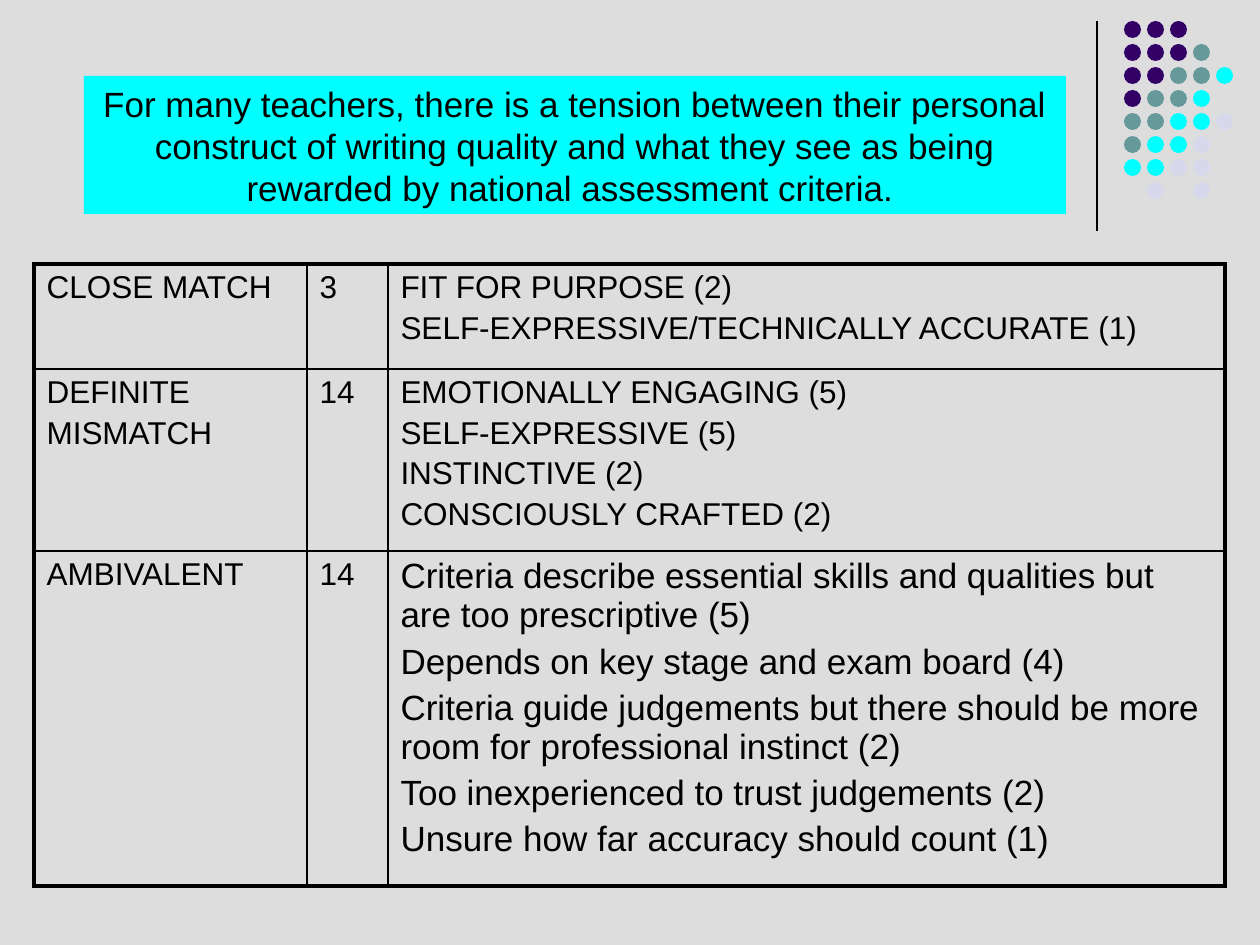
from pptx import Presentation
from pptx.dml.color import RGBColor
from pptx.enum.shapes import MSO_CONNECTOR as Link, MSO_SHAPE as Kind
from pptx.enum.text import MSO_ANCHOR as Anchor, PP_ALIGN as Align
from pptx.oxml.ns import qn
from pptx.util import Pt
from lxml.etree import SubElement as sub

SCALE = 914400 // 126
INK = "000000"
TONES = {"p": "330066", "t": "669999", "c": "00FFFF", "l": "D8D8EC"}
DOTS = ["ppp", "pppt", "ppttc", "pttc", "ttccl", "tccl", "ccll", " l l"]
CLAIM = (
    "For many teachers, there is a tension between their personal construct of "
    "writing quality and what they see as being rewarded by national assessment criteria. "
)
COLS = [273, 81, 837]
ROWS = [
    (105, 18, ["CLOSE MATCH"], ["3"],
     ["FIT FOR PURPOSE (2)", "SELF-EXPRESSIVE/TECHNICALLY ACCURATE (1)"]),
    (182, 18, ["DEFINITE", "MISMATCH"], ["14"],
     ["EMOTIONALLY ENGAGING (5)", "SELF-EXPRESSIVE (5)",
      "INSTINCTIVE (2)", "CONSCIOUSLY CRAFTED (2)"]),
    (335, 20, ["AMBIVALENT"], ["14"],
     ["Criteria describe essential skills and qualities but are too prescriptive (5)",
      "Depends on key stage and exam board (4)",
      "Criteria guide judgements but there should be more room for professional instinct (2)",
      "Too inexperienced to trust judgements (2)",
      "Unsure how far accuracy should count (1)"]),
]


def px(*nums):
    return [num * SCALE for num in nums]


def tint(code):
    return RGBColor.from_string(code)


def apply(item, form):
    for name, value in form.items():
        setattr(item, name, value)


def write(frame, lines, size, form):
    frame.word_wrap = True
    for i, line in enumerate(lines):
        para = frame.paragraphs[0] if i == 0 else frame.add_paragraph()
        apply(para, form)
        run = para.add_run()
        run.text = line
        apply(run.font, {"name": "Arial", "size": Pt(size), "bold": False})
        run.font.color.rgb = tint(INK)


def block(slide, kind, box, color):
    shape = slide.shapes.add_shape(kind, *px(*box))
    shape.shadow.inherit = False
    shape.fill.solid()
    shape.fill.fore_color.rgb = tint(color)
    shape.line.fill.background()
    return shape


def rule(slide, ends):
    line = slide.shapes.add_connector(Link.STRAIGHT, *px(*ends))
    line.line.color.rgb = tint(INK)
    line.line.width = Pt(0.75)
    sub(line._element.spPr, qn("a:effectLst"))


def dots(slide, left, top, step, size):
    for r, row in enumerate(DOTS):
        for c, key in enumerate(row):
            if key in TONES:
                box = (left + c * step, top + r * step, size, size)
                block(slide, Kind.OVAL, box, TONES[key])


def banner(slide, box):
    frame = block(slide, Kind.RECTANGLE, box, TONES["c"]).text_frame
    frame.vertical_anchor = Anchor.TOP
    write(frame, [CLAIM], 20, {"alignment": Align.CENTER, "line_spacing": Pt(24)})


def edge(cell, outer):
    props = cell._tc.get_or_add_tcPr()
    for side in "LRTB":
        width = Pt(2.25 if side in outer else 1)
        line = sub(props, qn("a:ln" + side), w=str(width))
        fill = sub(line, qn("a:solidFill"))
        sub(fill, qn("a:srgbClr"), val=INK)


def grid(slide, left, top):
    high = [row[0] for row in ROWS]
    box = px(left, top, sum(COLS), sum(high))
    table = slide.shapes.add_table(len(ROWS), len(COLS), *box).table
    apply(table, {"first_row": False, "horz_banding": False})
    for col, wide in zip(table.columns, px(*COLS)):
        col.width = wide
    for r, (tall, size, *texts) in enumerate(ROWS):
        table.rows[r].height = px(tall)[0]
        for c, lines in enumerate(texts):
            cell = table.cell(r, c)
            tests = {"L": c == 0, "R": c == len(COLS) - 1,
                     "T": r == 0, "B": r == len(ROWS) - 1}
            edge(cell, [side for side, hit in tests.items() if hit])
            cell.fill.background()
            gap = Pt(3 if size == 18 else 4)
            write(cell.text_frame, lines, size if c == 2 else 18, {"space_before": gap})


def main():
    deck = Presentation()
    deck.slide_width, deck.slide_height = px(1260, 945)
    slide = deck.slides.add_slide(deck.slide_layouts[6])
    back = slide.background.fill
    back.solid()
    back.fore_color.rgb = tint("DDDDDD")
    rule(slide, (1097, 21, 1097, 231))
    dots(slide, 1124, 21, 23, 17)
    banner(slide, (84, 76, 982, 138))
    grid(slide, 34, 264)
    deck.save("out.pptx")


if __name__ == "__main__":
    main()
